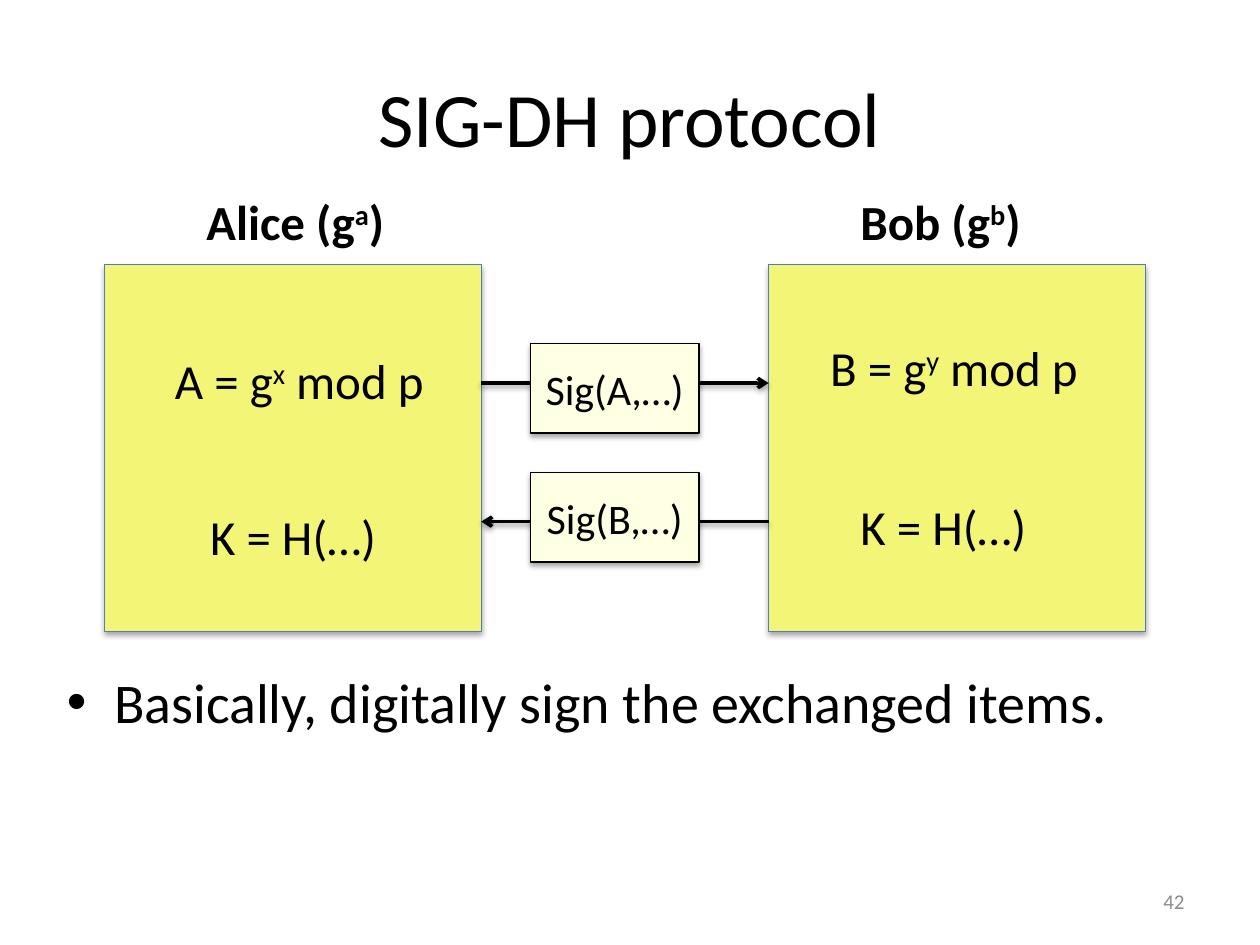
import pptx
import pptx.dml.color
import pptx.enum.shapes
import pptx.enum.text
import pptx.oxml
import pptx.oxml.ns
import pptx.util
from pptx.util import Pt

FONT = "Calibri"
COLORS = {
    "text": "000000",
    "number": "8C8C8C",
    "party": "F2F576",
    "party_line": "4B7EBC",
    "message": "FEFFE3",
    "line": "000000",
    "shadow": "000000",
}
ALIGN = pptx.enum.text.PP_ALIGN
ANCHOR = pptx.enum.text.MSO_ANCHOR


def rgb(name):
    return pptx.dml.color.RGBColor.from_string(COLORS[name])


def place(sp, left, top, width, height):
    sp.left, sp.top, sp.width, sp.height = Pt(left), Pt(top), Pt(width), Pt(height)


def style_runs(p, size, color="text", bold=False):
    for r in p.runs:
        r.font.name = FONT
        r.font.size = Pt(size)
        r.font.bold = bold
        r.font.color.rgb = rgb(color)


def add_shadow(sp, opacity, distance):
    spPr = sp._element.spPr
    for old in spPr.findall(pptx.oxml.ns.qn("a:effectLst")):
        spPr.remove(old)
    spPr.append(pptx.oxml.parse_xml(
        f'<a:effectLst {pptx.oxml.ns.nsdecls("a")}>'
        f'<a:outerShdw blurRad="{Pt(3.15)}" dist="{Pt(distance)}" dir="5400000" rotWithShape="0">'
        f'<a:srgbClr val="{COLORS["shadow"]}"><a:alpha val="{opacity * 1000}"/></a:srgbClr>'
        '</a:outerShdw></a:effectLst>'))


def fill_placeholder(sp, text, size, box):
    place(sp, *box)
    p = sp.text_frame.paragraphs[0]
    p.text = text
    style_runs(p, size)


def add_box(s, box, fill, line, text=""):
    sp = s.shapes.add_shape(pptx.enum.shapes.MSO_SHAPE.RECTANGLE, *map(Pt, box))
    sp.shadow.inherit = False
    sp.fill.solid()
    sp.fill.fore_color.rgb = rgb(fill)
    sp.line.color.rgb = rgb(line)
    sp.line.width = Pt(0.75)
    add_shadow(sp, 35, 1.8)
    if text:
        tf = sp.text_frame
        tf.vertical_anchor = ANCHOR.MIDDLE
        p = tf.paragraphs[0]
        p.text = text
        p.alignment = ALIGN.CENTER
        style_runs(p, 24)


def add_line(s, x1, x2, y, arrow=False):
    cxn = s.shapes.add_connector(
        pptx.enum.shapes.MSO_CONNECTOR.STRAIGHT, Pt(x1), Pt(y), Pt(x2), Pt(y))
    cxn.line.color.rgb = rgb("line")
    cxn.line.width = Pt(2)
    if arrow:
        cxn.line._get_or_add_ln().append(pptx.oxml.parse_xml(
            f'<a:tailEnd {pptx.oxml.ns.nsdecls("a")} type="arrow"/>'))
    add_shadow(cxn, 38, 1.6)


def add_label(s, box, text, sup="", rest="", bold=False):
    tf = s.shapes.add_textbox(*map(Pt, box)).text_frame
    tf.word_wrap = False
    tf.auto_size = pptx.enum.text.MSO_AUTO_SIZE.SHAPE_TO_FIT_TEXT
    p = tf.paragraphs[0]
    p.text = text
    if sup:
        r = p.add_run()
        r.text = sup
        r._r.get_or_add_rPr().set("baseline", "30000")
        p.add_run().text = rest
    style_runs(p, 28, bold=bold)


def add_slide_number(s, text, box):
    tf = s.shapes.add_textbox(*map(Pt, box)).text_frame
    tf.word_wrap = True
    tf.vertical_anchor = ANCHOR.MIDDLE
    p = tf.paragraphs[0]
    p.text = text
    p.alignment = ALIGN.RIGHT
    style_runs(p, 12, "number")


def main():
    prs = pptx.Presentation()
    prs.slide_width, prs.slide_height = Pt(720), Pt(540)
    s = prs.slides.add_slide(prs.slide_layouts[1])
    fill_placeholder(s.shapes.title, "SIG-DH protocol", 44, (36, 21.6, 648, 90))
    fill_placeholder(s.placeholders[1], "Basically, digitally sign the exchanged items.",
                     32, (31, 378, 648, 121.7))

    alice, bob, width = 59.75, 439.2, 215.25
    alice_side = alice + width
    for left in (alice, bob):
        add_box(s, (left, 151.2, width, 209.5), "party", "party_line")

    add_line(s, 393.8, bob, 218.9, arrow=True)
    add_line(s, 319.7, alice_side, 298.1, arrow=True)
    add_line(s, alice_side, 314.6, 218.9)
    add_line(s, 393.8, bob, 298.1)
    for text, top in (("Sig(A,…)", 196.3), ("Sig(B,…)", 270)):
        add_box(s, (303, top, 96.5, 51.1), "message", "line", text)

    height = 41.2
    add_label(s, (92.9, 196.6, 159.8, height), "A = g", "x", " mod p")
    add_label(s, (467.3, 189.4, 159.1, height), "B = g", "y", " mod p")
    add_label(s, (113, 285.8, 111, height), "K = H(…)")
    add_label(s, (484.6, 280.1, 112.3, height), "K = H(…)")
    add_label(s, (110.9, 105.8, 117.4, height), "Alice (g", "a", ")", bold=True)
    add_label(s, (484.6, 105.8, 108, height), "Bob (g", "b", ")", bold=True)

    add_slide_number(s, "42", (516, 500.5, 168, 28.75))
    prs.save("out.pptx")


if __name__ == "__main__":
    main()
